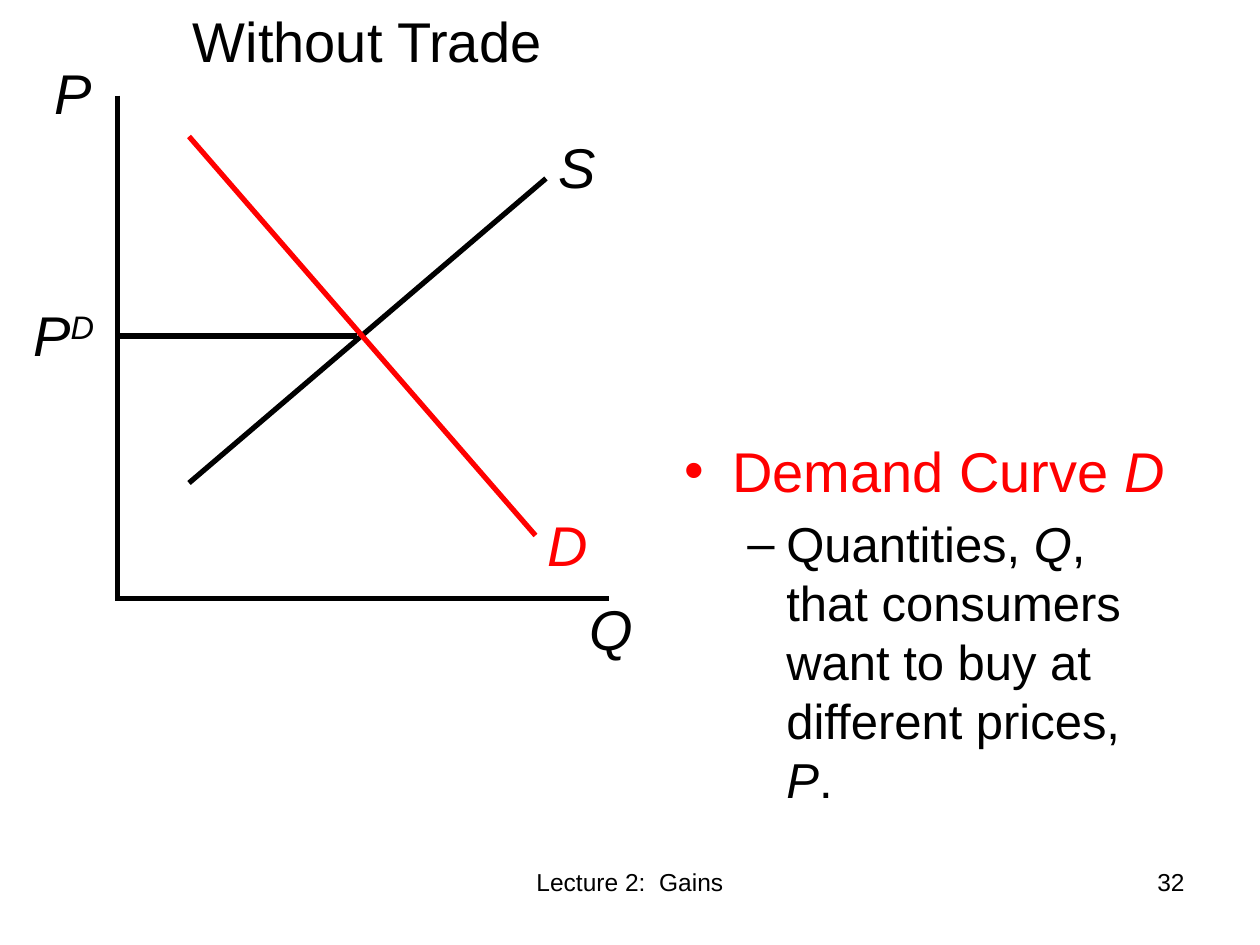
from lxml import etree
from pptx import Presentation
from pptx.dml.color import RGBColor
from pptx.enum.shapes import MSO_CONNECTOR
from pptx.enum.text import MSO_AUTO_SIZE, PP_ALIGN
from pptx.oxml.ns import qn
from pptx.util import Inches, Pt

BLACK = RGBColor(0x00, 0x00, 0x00)
RED = RGBColor(0xFF, 0x00, 0x00)
LEFT, CENTER, RIGHT = PP_ALIGN.LEFT, PP_ALIGN.CENTER, PP_ALIGN.RIGHT
STRAIGHT = MSO_CONNECTOR.STRAIGHT
GROW, FIXED = MSO_AUTO_SIZE.SHAPE_TO_FIT_TEXT, MSO_AUTO_SIZE.NONE
COLUMNS, ROWS = 120, 90
LABEL_HEIGHT = 7.7


class LectureSlide:
    """Style and current slide; positions are columns and rows of a 120 x 90 grid."""

    font_name = "Arial"
    line_width = Pt(3)

    def __init__(self, deck):
        self.column = deck.slide_width / COLUMNS
        self.row = deck.slide_height / ROWS
        self.slide = deck.slides.add_slide(deck.slide_layouts[6])

    def place(self, column, row):
        return round(column * self.column), round(row * self.row)

    def line(self, start, end, color=BLACK):
        connector = self.slide.shapes.add_connector(
            STRAIGHT, *self.place(*start), *self.place(*end))
        connector.line.color.rgb = color
        connector.line.width = self.line_width
        etree.SubElement(connector._element.spPr, qn("a:effectLst"))

    def frame(self, position, size, fit=FIXED):
        box = self.slide.shapes.add_textbox(*self.place(*position), *self.place(*size))
        box.text_frame.word_wrap = True
        box.text_frame.auto_size = fit
        return box.text_frame

    def run(self, paragraph, text, size, color=BLACK, italic=False):
        run = paragraph.add_run()
        run.text = text
        run.font.color.rgb = color
        style = {"name": self.font_name, "size": Pt(size), "italic": italic}
        for attribute, value in style.items():
            setattr(run.font, attribute, value)
        return run

    def text(self, text, position, size, points, align=LEFT, fit=FIXED):
        paragraph = self.frame(position, size, fit).paragraphs[0]
        paragraph.alignment = align
        self.run(paragraph, text, points)

    def symbol(self, letter, position, color=BLACK, superscript=None):
        paragraph = self.frame(position, (24, LABEL_HEIGHT), GROW).paragraphs[0]
        self.run(paragraph, letter, 32, color, True)
        if superscript:
            raised = self.run(paragraph, superscript, 32, color, True)
            raised._r.get_or_add_rPr().set("baseline", "30000")

    def bullets(self, position, size, items):
        """Each item is (level, mark, margin, hanging, points, color, parts).

        Every second part is an italic symbol.
        """
        frame = self.frame(position, size)
        for index, (level, mark, margin, hanging, points, color, parts) in enumerate(items):
            paragraph = frame.add_paragraph() if index else frame.paragraphs[0]
            paragraph.level = level
            paragraph.space_before = Pt(points * 0.2)
            properties = paragraph._p.get_or_add_pPr()
            indents = {"marL": Inches(margin), "indent": -Inches(hanging)}
            for attribute, value in indents.items():
                properties.set(attribute, str(value))
            etree.SubElement(properties, qn("a:buFont"), typeface=self.font_name)
            etree.SubElement(properties, qn("a:buChar"), char=mark)
            for part_index, part in enumerate(parts):
                self.run(paragraph, part, points, color, part_index % 2 == 1)


def main():
    deck = Presentation()
    deck.slide_width, deck.slide_height = Inches(10), Inches(7.5)
    lecture = LectureSlide(deck)

    lecture.text("32", (86, 82), (28, 6.2), 14, RIGHT)
    lecture.text("Lecture 2:  Gains", (41, 82), (38, 6.2), 14, CENTER)

    price_axis, quantity_axis = 11.2, 57
    equilibrium = (34, 32)
    lecture.line((price_axis, 9.1), (price_axis, quantity_axis))
    lecture.line((52, 17), (18, 46))
    lecture.line((58, quantity_axis), (11, quantity_axis))
    lecture.line((51, 51), (18, 13), RED)
    lecture.line(equilibrium, (11, equilibrium[1]))

    lecture.symbol("S", (52, 12))
    lecture.symbol("D", (51, 48), RED)
    lecture.symbol("Q", (55, 56))
    lecture.symbol("P", (4, 5))
    lecture.symbol("P", (2, 28), superscript="D")

    lecture.text("Without Trade", (17, 0), (36, LABEL_HEIGHT), 32, CENTER, GROW)
    lecture.bullets((64, 41), (49, 38), [
        (0, "•", 0.38, 0.38, 32, RED, ["Demand Curve ", "D"]),
        (1, "–", 0.81, 0.31, 28, BLACK,
         ["Quantities, ", "Q", ", that consumers want to buy at different prices, ",
          "P", "."]),
    ])
    deck.save("out.pptx")


if __name__ == "__main__":
    main()
